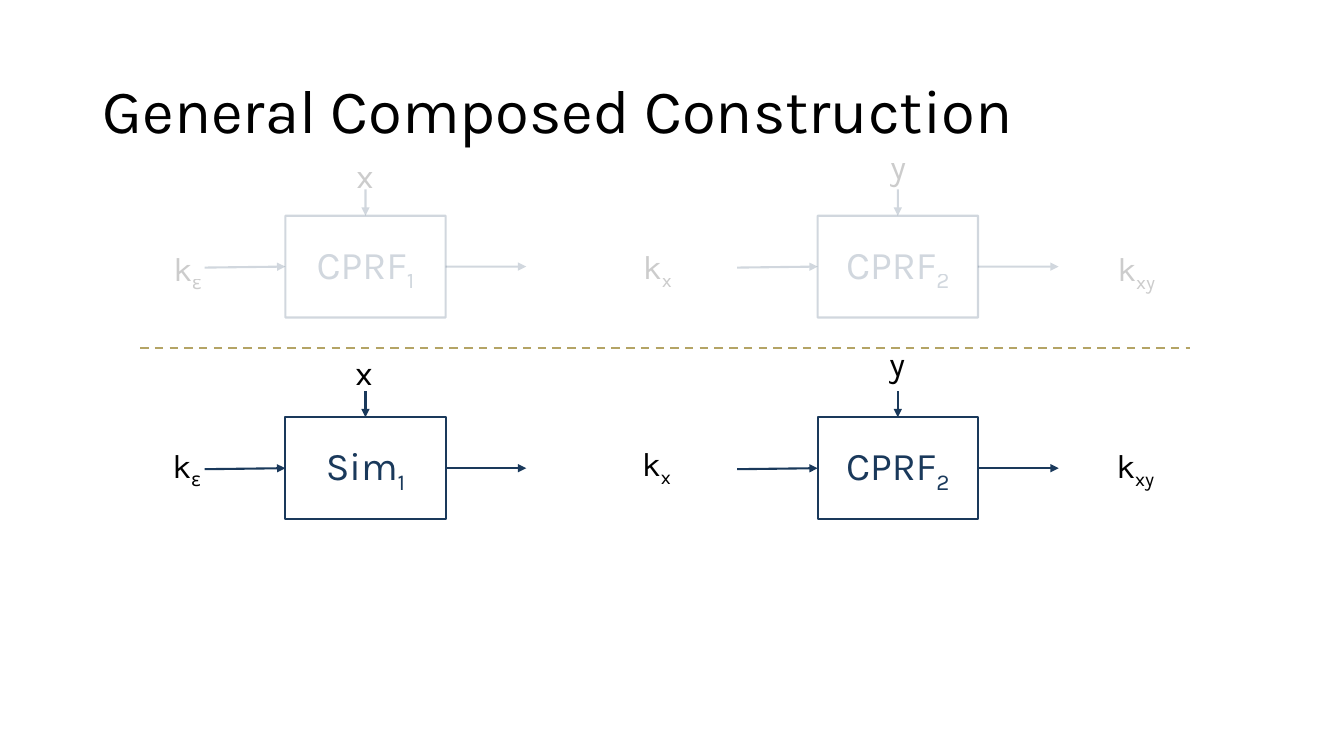
"""Build the slide on the general composed construction of two CPRFs."""
from dataclasses import dataclass

import lxml.etree
import pptx
import pptx.dml.color
import pptx.enum.dml
import pptx.enum.shapes
import pptx.enum.text
import pptx.oxml.ns
import pptx.util

Inches = pptx.util.Inches
qn = pptx.oxml.ns.qn


@dataclass(frozen=True)
class Theme:
    font = "Karla"
    ink = pptx.dml.color.RGBColor.from_string("000000")
    navy = pptx.dml.color.RGBColor.from_string("1A395B")
    gold = pptx.dml.color.RGBColor.from_string("B4A465")
    title_size = pptx.util.Pt(44)
    box_size = pptx.util.Pt(28)
    label_size = pptx.util.Pt(24)
    line_width = pptx.util.Pt(1.5)
    subscript = "-25000"


theme = Theme()


def write_text(shape, base, subscript, size, color, opacity):
    """Write centred text with an optional subscript and fade the whole shape."""
    paragraph = shape.text_frame.paragraphs[0]
    paragraph.alignment = pptx.enum.text.PP_ALIGN.CENTER
    for text in filter(None, (base, subscript)):
        run = paragraph.add_run()
        run.text = text
        run.font.name = theme.font
        run.font.size = size
        run.font.color.rgb = color
    if subscript:
        run.font._element.set("baseline", theme.subscript)
    if opacity < 100:
        for color_element in shape._element.iter(qn("a:srgbClr")):
            lxml.etree.SubElement(color_element, qn("a:alpha"), val=str(opacity * 1000))


def add_line(shapes, start, end, color, opacity=100, arrow=True):
    """Add a straight line, with an arrowhead at its end if wanted."""
    connector = shapes.add_connector(
        pptx.enum.shapes.MSO_CONNECTOR.STRAIGHT, *map(Inches, (*start, *end)))
    connector.line.color.rgb = color
    connector.line.width = theme.line_width
    if opacity < 100:
        color_element = next(connector._element.iter(qn("a:srgbClr")))
        lxml.etree.SubElement(color_element, qn("a:alpha"), val=str(opacity * 1000))
    if arrow:
        lxml.etree.SubElement(connector.line._get_or_add_ln(), qn("a:tailEnd"), type="triangle")
    lxml.etree.SubElement(connector._element.spPr, qn("a:effectLst"))
    return connector


presentation = pptx.Presentation()
presentation.slide_width = Inches(13.33)
presentation.slide_height = Inches(7.5)
slide = presentation.slides.add_slide(presentation.slide_layouts[5])

title = slide.shapes.title
title.left, title.top, title.width, title.height = map(Inches, (0.92, 0.4, 11.5, 1.45))
title.text_frame.text = "General Composed Construction"
title.text_frame.auto_size = pptx.enum.text.MSO_AUTO_SIZE.NONE
title.text_frame.vertical_anchor = pptx.enum.text.MSO_ANCHOR.MIDDLE
paragraph = title.text_frame.paragraphs[0]
paragraph.alignment = pptx.enum.text.PP_ALIGN.LEFT
paragraph.line_spacing = 0.9
paragraph.runs[0].font.name = theme.font
paragraph.runs[0].font.size = theme.title_size
paragraph.runs[0].font.color.rgb = theme.ink

box_width, box_height = 1.59, 1.01
side_arrow, top_arrow = 0.8, 0.26
box_lefts = (2.83, 8.11)
rows = (
    (2.14, ("CPRF", "CPRF"), 20, 0, 0),
    (4.14, ("Sim", "CPRF"), 100, -0.01, -0.05),
)
labels = (
    ("k", "ε", 1.33, 0.27),
    ("x", "", 3.09, -0.65),
    ("k", "x", 5.99, 0.25),
    ("y", "", 8.38, -0.74),
    ("k", "xy", 10.74, 0.27),
)

for top, names, opacity, shift_x, shift_y in rows:
    for number, (left, name) in enumerate(zip(box_lefts, names), 1):
        group = slide.shapes.add_group_shape()
        box = group.shapes.add_shape(
            pptx.enum.shapes.MSO_SHAPE.RECTANGLE,
            *map(Inches, (left, top, box_width, box_height)))
        box.shadow.inherit = False
        box.fill.background()
        box.line.color.rgb = theme.navy
        box.line.width = theme.line_width
        box.text_frame.vertical_anchor = pptx.enum.text.MSO_ANCHOR.MIDDLE
        write_text(box, name, str(number), theme.box_size, theme.navy, opacity)

        center, middle, right = left + box_width / 2, top + box_height / 2, left + box_width
        key_input = add_line(group.shapes, (left - side_arrow, middle + 0.01),
                             (left, middle), theme.navy, opacity)
        key_input.end_connect(box, 1)
        value_input = add_line(group.shapes, (center, top - top_arrow),
                               (center, top), theme.navy, opacity)
        value_input.end_connect(box, 0)
        output = add_line(group.shapes, (right, middle),
                          (right + side_arrow, middle), theme.navy, opacity)
        output.begin_connect(box, 3)

    for base, subscript, left, offset in labels:
        label = slide.shapes.add_textbox(
            *map(Inches, (left + shift_x, top + offset + shift_y, 1.06, 0.5)))
        label.text_frame.word_wrap = True
        label.text_frame.auto_size = pptx.enum.text.MSO_AUTO_SIZE.SHAPE_TO_FIT_TEXT
        write_text(label, base, subscript, theme.label_size, theme.ink, opacity)

divider = add_line(slide.shapes, (1.39, 3.45), (11.8, 3.45), theme.gold, arrow=False)
divider.line.dash_style = pptx.enum.dml.MSO_LINE.DASH

presentation.save("out.pptx")
